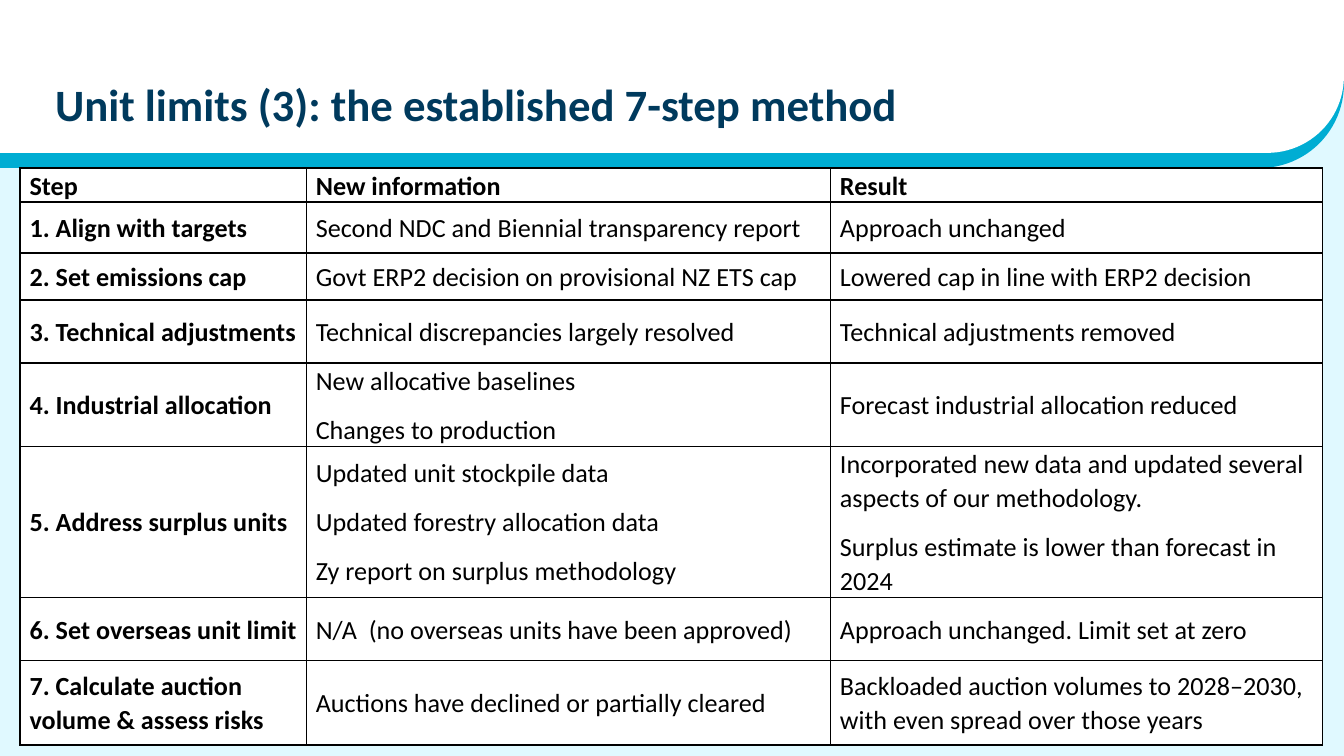
import pptx
import pptx.util
import pptx.dml.color
import pptx.enum.shapes
import pptx.enum.text
import pptx.oxml
import pptx.oxml.ns

WIDE = 10
HIGH = WIDE * 9 / 16
FONT = "Calibri"
HUES = {"pale": "C3F4FF", "teal": "00ADD3", "white": "FFFFFF",
        "navy": "003A5D", "black": "000000"}
COLS = [2.13, 3.9, 3.66]
ROWS = [0.25, 0.38, 0.35, 0.47, 0.57, 1.05, 0.47, 0.63]
STEPS = [
    ("Step", "New information", "Result"),
    ("1. Align with targets", "Second NDC and Biennial transparency report",
     "Approach unchanged"),
    ("2. Set emissions cap", "Govt ERP2 decision on provisional NZ ETS cap",
     "Lowered cap in line with ERP2 decision"),
    ("3. Technical adjustments", "Technical discrepancies largely resolved",
     "Technical adjustments removed"),
    ("4. Industrial allocation",
     "New allocative baselines\nChanges to production",
     "Forecast industrial allocation reduced"),
    ("5. Address surplus units",
     "Updated unit stockpile data\nUpdated forestry allocation data\n"
     "Zy report on surplus methodology",
     "Incorporated new data and updated several aspects of our methodology.\n"
     "Surplus estimate is lower than forecast in 2024"),
    ("6. Set overseas unit limit",
     "N/A  (no overseas units have been approved)",
     "Approach unchanged. Limit set at zero"),
    ("7. Calculate auction volume & assess risks",
     "Auctions have declined or partially cleared",
     "Backloaded auction volumes to 2028–2030, "
     "with even spread over those years"),
]


def inch(size):
    return pptx.util.Inches(size)


def paint(fill, hue):
    fill.solid()
    fill.fore_color.rgb = pptx.dml.color.RGBColor.from_string(HUES[hue])


def style(para, size, hue, bold, space):
    para.line_spacing = space
    for run in para.runs:
        run.font.name = FONT
        run.font.size = pptx.util.Pt(size)
        run.font.bold = bold
        paint(run.font.fill, hue)


def panel(slide, box, kind, hue):
    shape = slide.shapes.add_shape(kind, *map(inch, box))
    shape.shadow.inherit = False
    shape.line.fill.background()
    paint(shape.fill, hue)
    return shape


def back(slide, box):
    shape = panel(slide, box, pptx.enum.shapes.MSO_SHAPE.RECTANGLE, "pale")
    tint = next(shape.element.spPr.iter(pptx.oxml.ns.qn("a:srgbClr")))
    tint.append(pptx.oxml.parse_xml(
        f'<a:alpha {pptx.oxml.ns.nsdecls("a")} val="50000"/>'))


def banner(slide, box):
    left, top, width, height = box
    kind = pptx.enum.shapes.MSO_SHAPE.ROUND_1_RECTANGLE
    for hue, share in (("teal", 1), ("white", 0.91)):
        shape = panel(slide, (left, top, width, height * share), kind, hue)
        shape.adjustments[0] = 0.5
        shape.rotation = 180
        shape.element.spPr.find(pptx.oxml.ns.qn("a:xfrm")).set("flipH", "1")
    return shape


def header(slide, box, under):
    title = slide.shapes.title
    title.left, title.top, title.width, title.height = map(inch, box)
    frame = title.text_frame
    frame.text = "Unit limits (3): the established 7-step method"
    frame.auto_size = pptx.enum.text.MSO_AUTO_SIZE.NONE
    frame.word_wrap = True
    frame.vertical_anchor = pptx.enum.text.MSO_ANCHOR.MIDDLE
    frame.margin_left = frame.margin_right = 0
    frame.margin_top = frame.margin_bottom = 0
    para = frame.paragraphs[0]
    para.alignment = pptx.enum.text.PP_ALIGN.LEFT
    style(para, 24, "navy", True, 0.9)
    under.element.addnext(title.element)


def border(cell):
    props = cell._tc.get_or_add_tcPr()
    for side in "LRTB":
        props.append(pptx.oxml.parse_xml(
            f'<a:ln{side} {pptx.oxml.ns.nsdecls("a")} w="12700"><a:solidFill>'
            f'<a:srgbClr val="{HUES["black"]}"/></a:solidFill></a:ln{side}>'))


def entry(cell, text, bold, anchor):
    border(cell)
    paint(cell.fill, "white")
    cell.margin_left = inch(0.07)
    cell.margin_right = inch(0.06)
    cell.margin_top = cell.margin_bottom = 0
    cell.vertical_anchor = anchor
    cell.text_frame.text = text
    for para in cell.text_frame.paragraphs:
        para.space_before = para.space_after = pptx.util.Pt(4)
        style(para, 14, "black", bold, 1.07)


def grid(slide, box):
    left, top, width, height = box
    frame = slide.shapes.add_table(len(ROWS), len(COLS), *map(inch, box))
    table = frame.table
    table.first_row = table.horz_banding = False
    for col, share in zip(table.columns, COLS):
        col.width = inch(width * share / sum(COLS))
    for row, share in zip(table.rows, ROWS):
        row.height = inch(height * share / sum(ROWS))
    anchors = pptx.enum.text.MSO_ANCHOR
    for r, step in enumerate(STEPS):
        for c, text in enumerate(step):
            anchor = anchors.MIDDLE if r else anchors.TOP
            entry(table.cell(r, c), text, r == 0 or c == 0, anchor)


def main():
    deck = pptx.Presentation()
    deck.slide_width, deck.slide_height = inch(WIDE), inch(HIGH)
    slide = deck.slides.add_slide(deck.slide_layouts[5])
    back(slide, (0, 0, WIDE, HIGH))
    under = banner(slide, (0, 0, WIDE, 1.25))
    header(slide, (0.41, 0.25, 8.9, 1.09), under)
    grid(slide, (0.15, 1.25, sum(COLS), sum(ROWS)))
    deck.save("out.pptx")


if __name__ == "__main__":
    main()
